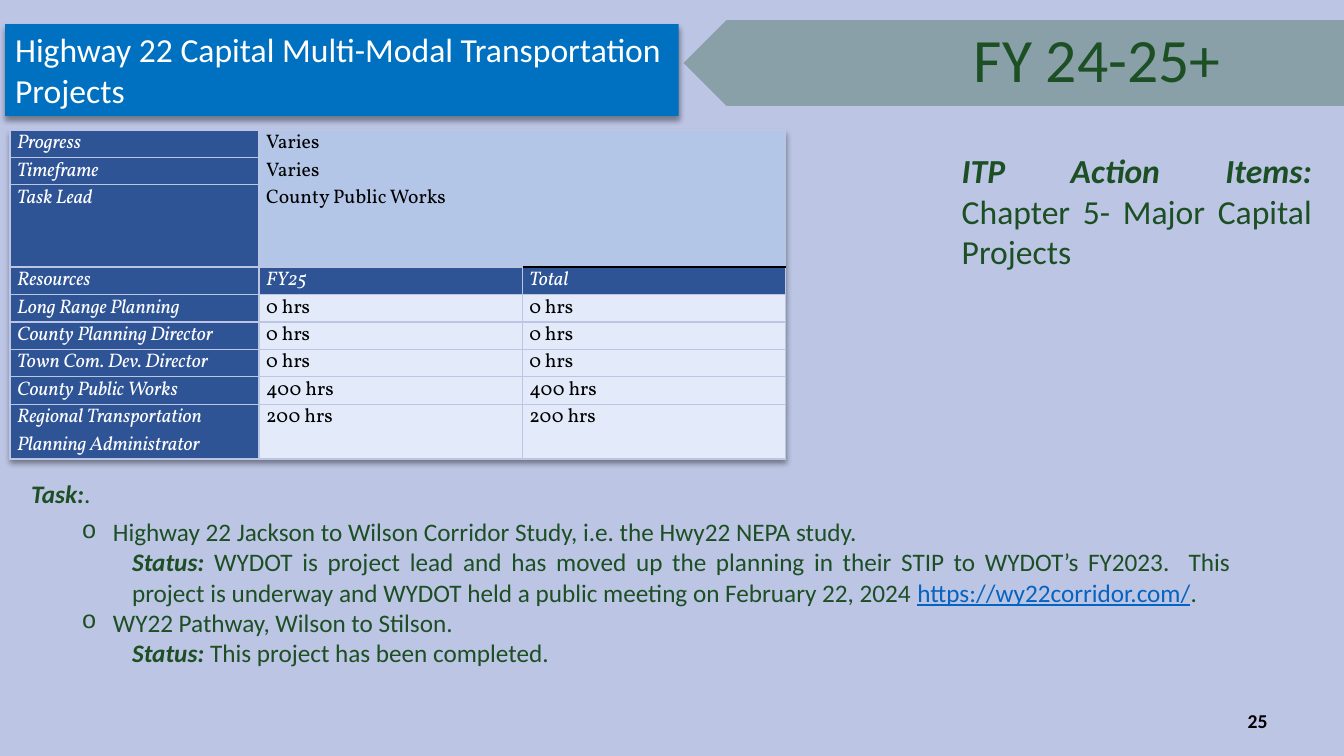
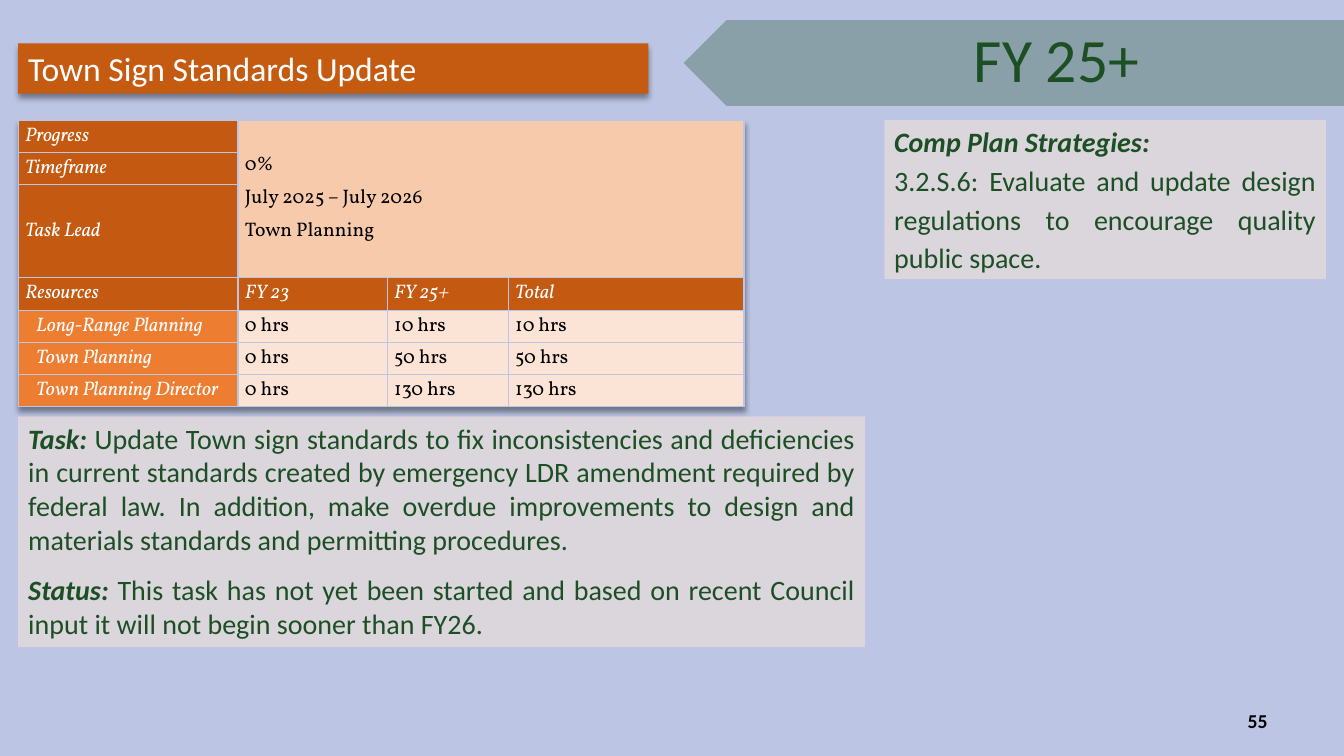
"""Build two project slides with a resource table, a year banner and task notes."""
from pptx import Presentation, oxml, util as u
from pptx.dml.color import RGBColor
from pptx.enum import shapes, text
from pptx.oxml.ns import nsdecls, qn

HUE = dict(back="BCC5E4", green="1C4F24", blue="0070C0", rust="C55A11", cream="FBE5D6",
           link="0563C1", white="FFFFFF", black="000000")
BOLD = dict(bold=True, italic=True)
LINK = dict(underline=True, hue="link")
JUST, LEFT, RIGHT = (text.PP_ALIGN.JUSTIFY, text.PP_ALIGN.LEFT, text.PP_ALIGN.RIGHT)
ITEM = dict(level=1, left=0.81, hang=-0.31, mark="o")
NOTE = dict(level=2, left=1)

PAGES = [
    dict(
        title="Highway 22 Capital Multi-Modal Transportation Projects",
        bar=(0.05, 0.24, 6.68, 0.91), hue="blue", year="FY 24-25+", span=2.67, page="25",
        side=dict(at=(9.44, 1.44, 3.67, 1.31), fill="back", size=24, paras=[
            ({}, [("ITP Action Items: ", BOLD), ("Chapter 5- Major Capital Projects", {})])]),
        task=dict(at=(0.21, 4.69, 12.1, 2), fill="back", size=18, paras=[
            (dict(after=6), [("Task:", BOLD), (".", {})]),
            (ITEM, [("Highway 22 Jackson to Wilson Corridor Study, i.e. the Hwy22 NEPA study.", {})]),
            (NOTE, [("Status: ", BOLD),
                    ("WYDOT is project lead and has moved up the planning in their STIP to "
                     "WYDOT’s FY2023.  This project is underway and WYDOT held a public "
                     "meeting on February 22, 2024 ", {}),
                    ("https://wy22corridor.com/", LINK), (".", {})]),
            (ITEM, [("WY22 Pathway, Wilson to Stilson.", {})]),
            (NOTE, [("Status: ", BOLD), ("This project has been completed.", {})])]),
        grid=dict(at=(0.1, 1.29), cols=[2.47, 2.61, 2.61],
                  rows=[0.24, 0.24, 0.7] + [0.24] * 5 + [0.44],
                  head="2F5496", name="2F5496", info="B4C6E7", cell="E3EBFA",
                  anchor=text.MSO_ANCHOR.TOP, indent=0, gap=0, rule=True,
                  facts=["Varies", "Varies", "County Public Works"],
                  body=[("Resources", "FY25", "Total"),
                        ("Long Range Planning", "0 hrs", "0 hrs"),
                        ("County Planning Director", "0 hrs", "0 hrs"),
                        ("Town Com. Dev. Director", "0 hrs", "0 hrs"),
                        ("County Public Works", "400 hrs", "400 hrs"),
                        ("Regional Transportation Planning Administrator", "200 hrs", "200 hrs")])),
    dict(
        title="Town Sign Standards Update",
        bar=(0.18, 0.43, 6.25, 0.5), hue="rust", year="FY 25+", span=1.86, page="55",
        side=dict(at=(8.77, 1.19, 4.38, 1.58), fill="cream", size=20, paras=[
            ({}, [("Comp Plan Strategies:", BOLD)]),
            (dict(lines=1.15), [("3.2.S.6: Evaluate and update design regulations to "
                                 "encourage quality public space.", {})])]),
        task=dict(at=(0.18, 4.13, 8.4, 2.29), fill="cream", size=20, paras=[
            (dict(after=6), [("Task: ", BOLD),
                             ("Update Town sign standards to fix inconsistencies and deficiencies "
                              "in current standards created by emergency LDR amendment required "
                              "by federal law. In addition, make overdue improvements to design "
                              "and materials standards and permitting procedures.", {})]),
            (dict(before=6), [("Status:", BOLD),
                              (" This task has not yet been started and based on recent Council "
                               "input it will not begin sooner than FY26.", {})])]),
        grid=dict(at=(0.18, 1.19), cols=[2.18, 1.48, 1.2, 2.34],
                  rows=[0.32, 0.32, 0.81] + [0.32] * 4,
                  head="C45911", name="ED7D31", info="F7CAAC", cell="FBE4D5",
                  anchor=text.MSO_ANCHOR.MIDDLE, indent=0.11, gap=2, rule=False,
                  facts=["0%", "July 2025 – July 2026", "Town Planning"],
                  body=[("Resources", "FY 23", "FY 25+", "Total"),
                        ("Long-Range Planning", "0 hrs", "10 hrs", "10 hrs"),
                        ("Town Planning", "0 hrs", "50 hrs", "50 hrs"),
                        ("Town Planning Director", "0 hrs", "130 hrs", "130 hrs")])),
]
LABELS = ["Progress", "Timeframe", "Task Lead"]


def rgb(name):
    return RGBColor.from_string(HUE.get(name, name))


def place(shape, at):
    for key, val in zip(("left", "top", "width", "height"), at):
        setattr(shape, key, u.Inches(val))


def paint(shape, hue, alpha=None):
    shape.fill.solid()
    shape.fill.fore_color.rgb = rgb(hue)
    shape.line.fill.background()
    shape.shadow.inherit = False
    if alpha:
        tone = shape._element.spPr.find(qn("a:solidFill"))[0]
        tone.append(oxml.parse_xml(f'<a:alpha {nsdecls("a")} val="{alpha * 1000}"/>'))


def shade():
    return oxml.parse_xml(
        f'<a:outerShdw {nsdecls("a")} blurRad="50800" dist="38100" dir="5400000" '
        'algn="t" rotWithShape="0"><a:srgbClr val="000000"><a:alpha val="40000"/>'
        '</a:srgbClr></a:outerShdw>')


def style(font, size, hue, face="Calibri", bold=False, italic=False, underline=False):
    look = dict(name=face, size=u.Pt(size), bold=bold, italic=italic, underline=underline)
    for key, val in look.items():
        setattr(font, key, val)
    font.color.rgb = rgb(hue)


def layout(para, left=0, hang=0, mark=None, level=0, before=0, after=0, lines=1.0, align=JUST):
    look = dict(level=level, space_before=u.Pt(before), space_after=u.Pt(after),
                line_spacing=lines, alignment=align)
    for key, val in look.items():
        setattr(para, key, val)
    props = para._p.get_or_add_pPr()
    props.set("marL", str(u.Inches(left)))
    props.set("indent", str(u.Inches(hang)))
    marks = ['buFont typeface="Courier New"', f'buChar char="{mark}"'] if mark else ["buNone"]
    for tag in marks:
        props.append(oxml.parse_xml(f'<a:{tag} {nsdecls("a")}/>'.replace(
            tag + " ", tag + " ", 1)))


def write(frame, paras, size, hue, face="Calibri", anchor=text.MSO_ANCHOR.TOP, wrap=True):
    frame.word_wrap = wrap
    frame.vertical_anchor = anchor
    for num, (form, runs) in enumerate(paras):
        para = frame.add_paragraph() if num else frame.paragraphs[0]
        layout(para, **form)
        for words, look in runs:
            run = para.add_run()
            run.text = words
            style(run.font, **{"size": size, "hue": hue, "face": face, **look})


def note(shape, data):
    place(shape, data["at"])
    paint(shape, data["fill"], 50)
    shape.text_frame.auto_size = text.MSO_AUTO_SIZE.NONE
    write(shape.text_frame, data["paras"], data["size"], "green")


def edge(cell, sides, hue):
    props = cell._tc.get_or_add_tcPr()
    for side in sides:
        props.append(oxml.parse_xml(
            f'<a:ln{side} {nsdecls("a")} w="12700"><a:solidFill><a:srgbClr val="{HUE[hue]}"/>'
            f'</a:solidFill></a:ln{side}>'))


def table(slide, grid):
    rows, cols = grid["rows"], grid["cols"]
    size = [u.Inches(val) for val in (*grid["at"], sum(cols), sum(rows))]
    tab = slide.shapes.add_table(len(rows), len(cols), *size).table
    tab.first_row = tab.horz_banding = False
    glow = oxml.parse_xml(f'<a:effectLst {nsdecls("a")}/>')
    glow.append(shade())
    tab._tbl.tblPr.insert(0, glow)
    for col, val in zip(tab.columns, cols):
        col.width = u.Inches(val)
    for row, val in zip(tab.rows, rows):
        row.height = u.Inches(val)
    top, last = len(LABELS), len(cols) - 1
    tab.cell(0, 1).merge(tab.cell(top - 1, last))
    lines = [(label,) + ("",) * last for label in LABELS] + grid["body"]
    for r, line in enumerate(lines):
        for c, words in enumerate(line):
            cell = tab.cell(r, c)
            cell.margin_left = cell.margin_right = u.Inches(0.07)
            cell.margin_top = cell.margin_bottom = 0
            ruled = grid["rule"] and r == top and c == last
            edge(cell, "LR", "back")
            edge(cell, "T", "black" if ruled else "back")
            edge(cell, "B", "black" if grid["rule"] and r == top - 1 and c == last else "back")
            title = c == 0 or r == top
            kind = ("name" if r > top else "head") if title else "info" if r < top else "cell"
            cell.fill.solid()
            cell.fill.fore_color.rgb = rgb(grid[kind])
            cell.vertical_anchor = grid["anchor"]
            form = dict(align=LEFT, left=grid["indent"] if kind == "name" else 0)
            paras = [(form, [(words, dict(italic=title))])]
            if (r, c) == (0, 1):
                gap = grid["gap"]
                paras = [(dict(align=LEFT, before=gap if n else 0, after=gap), [(fact, {})])
                         for n, fact in enumerate(grid["facts"])]
            if r >= top or c < 2 and (c == 0 or r == 0):
                frame = cell.text_frame
                write(frame, paras, 14, "white" if title else "black", "Vollkorn",
                      grid["anchor"])


def label(slide, at, words, size, hue, align=LEFT, wrap=True, bold=False):
    box = slide.shapes.add_textbox(*[u.Inches(val) for val in at])
    write(box.text_frame, [(dict(align=align), [(words, dict(bold=bold))])], size, hue,
          anchor=text.MSO_ANCHOR.MIDDLE, wrap=wrap)


def build(deck, page):
    slide = deck.slides.add_slide(deck.slide_layouts[1])
    title, body = slide.placeholders
    place(title, page["bar"])
    paint(title, page["hue"])
    title._element.spPr.find(qn("a:effectLst")).append(shade())
    title.text_frame.auto_size = text.MSO_AUTO_SIZE.NONE
    write(title.text_frame, [(dict(align=LEFT), [(page["title"], {})])], 24, "white")
    note(body, page["task"])
    note(slide.shapes.add_textbox(0, 0, 0, 0), page["side"])
    table(slide, page["grid"])
    plate = slide.shapes.add_shape(shapes.MSO_SHAPE.PENTAGON, 0, 0, 0, 0)
    place(plate, (6.78, 0.2, 6.56, 0.85))
    plate.rotation = 180
    paint(plate, "green", 31)
    label(slide, (9.56, 0.15, page["span"], 0.84), page["year"], 44, "green", wrap=False)
    label(slide, (9.56, 6.95, 3.11, 0.4), page["page"], 14, "black", RIGHT, bold=True)


def main():
    deck = Presentation()
    deck.slide_width, deck.slide_height = u.Inches(13.33), u.Inches(7.5)
    back = deck.slide_master.background.fill
    back.solid()
    back.fore_color.rgb = rgb("back")
    for page in PAGES:
        build(deck, page)
    deck.save("out.pptx")


if __name__ == "__main__":
    main()
